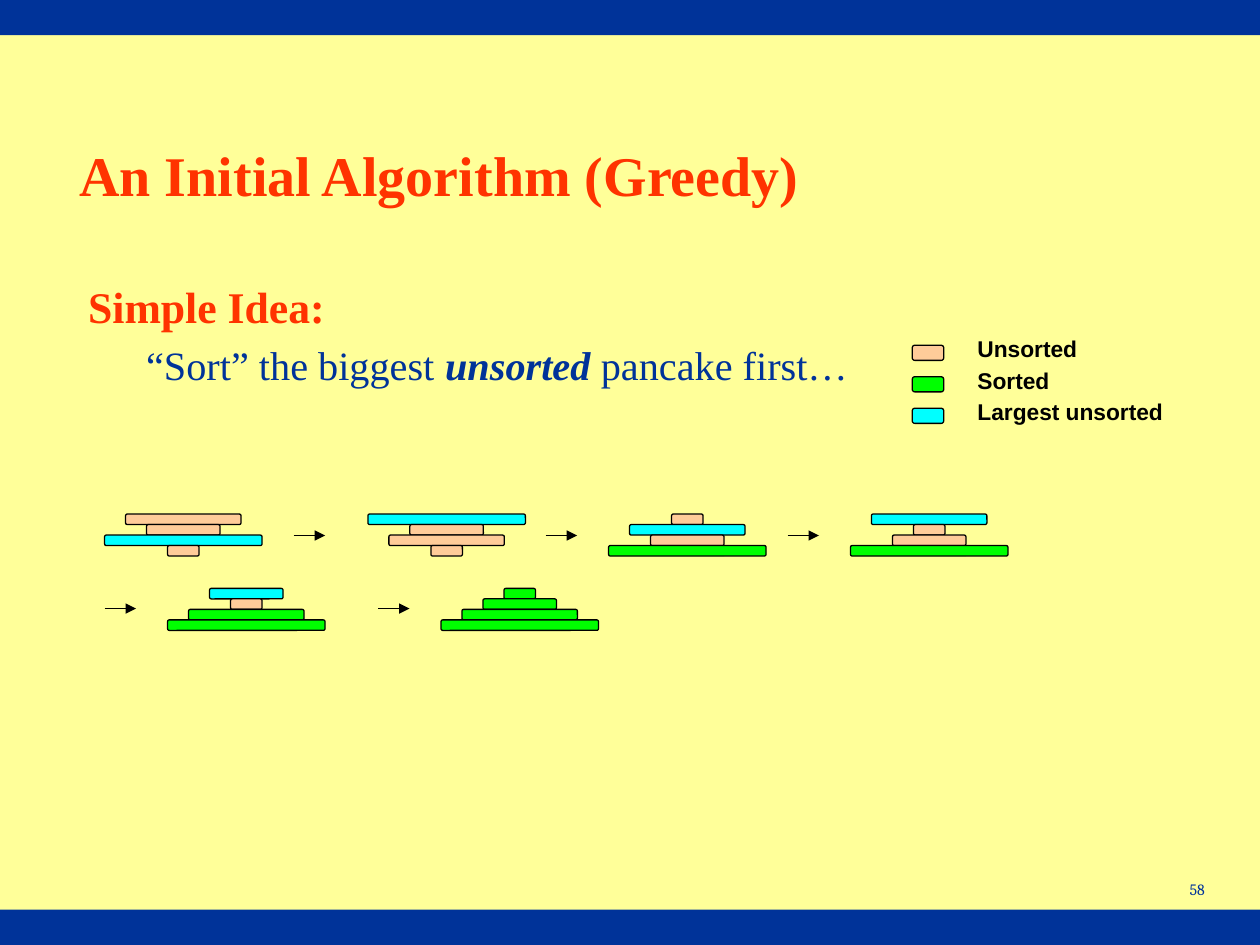
import lxml.etree
import pptx
import pptx.dml.color
import pptx.enum.shapes
import pptx.enum.text
import pptx.oxml.ns
import pptx.util
from pptx.util import Inches

COLORS = {
    "background": "FFFF99", "navy": "003399", "heading": "FF3300", "ink": "000000",
    "unsorted": "FFCC99", "sorted": "00FF00", "largest": "00FFFF",
}
PANCAKE_HEIGHT = 1 / 12
WIDEST = 1.25
STACKS = [
    (0.83, 4.08, (2, 1, 3, 0), 0),
    (2.92, 4.08, (3, 1, 2, 0), 0),
    (4.83, 4.08, (0, 2, 1, 3), 1),
    (6.75, 4.08, (2, 0, 1, 3), 1),
    (1.33, 4.67, (1, 0, 2, 3), 2),
    (3.5, 4.67, (0, 1, 2, 3), 4),
]
ARROWS = [(2.33, 4.25), (4.33, 4.25), (6.25, 4.25), (0.83, 4.83), (3, 4.83)]
LEGEND = [("Unsorted", "unsorted", 1), ("Sorted", "sorted", 1), ("Largest unsorted", "largest", 1.67)]


class SlideBuilder:
    """Holds the slide and its style, with a method for each kind of element."""

    def __init__(self, slide):
        self.slide = slide
        self.serif = "Times New Roman"
        self.outline = pptx.util.Pt(0.75)
        slide.background.fill.solid()
        slide.background.fill.fore_color.rgb = self.rgb("background")

    def rgb(self, color):
        return pptx.dml.color.RGBColor.from_string(COLORS[color])

    def add_xml(self, parent, tag, **attributes):
        lxml.etree.SubElement(parent, pptx.oxml.ns.qn(tag), **attributes)

    def format_run(self, run, font, size, color, bold=False, italic=False):
        run.font.name = font
        run.font.size = pptx.util.Pt(size)
        run.font.bold = bold
        run.font.italic = italic
        run.font.color.rgb = self.rgb(color)

    def place(self, holder, left, top, width, height):
        holder.left, holder.top = Inches(left), Inches(top)
        holder.width, holder.height = Inches(width), Inches(height)
        holder.text_frame.auto_size = pptx.enum.text.MSO_AUTO_SIZE.NONE

    def title(self, text):
        title = self.slide.shapes.title
        self.place(title, 0.53, 0.76, 7.13, 1.25)
        title.text_frame.text = text
        heading = title.text_frame.paragraphs[0]
        heading.alignment = pptx.enum.text.PP_ALIGN.LEFT
        self.format_run(heading.runs[0], self.serif, 32, "heading", bold=True)

    def indent(self, paragraph, margin, first):
        properties = paragraph._p.get_or_add_pPr()
        properties.set("marL", str(Inches(margin)))
        properties.set("indent", str(Inches(first)))
        self.add_xml(properties, "a:buNone")

    def body(self, heading, idea):
        body = self.slide.placeholders[1]
        self.place(body, 0.6, 2.17, 8.5, 1.4)
        body.text_frame.text = heading
        lead = body.text_frame.paragraphs[0]
        self.indent(lead, 0, 0)
        self.format_run(lead.runs[0], self.serif, 25, "heading", bold=True)
        detail = body.text_frame.add_paragraph()
        detail.level = 1
        self.indent(detail, 0.37, 0.01)
        for words, stressed in idea:
            run = detail.add_run()
            run.text = words
            self.format_run(run, self.serif, 23, "navy", stressed, stressed)

    def label(self, parent, text, left, top, width, height, font, size, color, bold=False, align="LEFT"):
        label = parent.shapes.add_textbox(Inches(left), Inches(top), Inches(width), Inches(height))
        label.text_frame.word_wrap = True
        label.text_frame.text = text
        paragraph = label.text_frame.paragraphs[0]
        paragraph.alignment = pptx.enum.text.PP_ALIGN[align]
        self.format_run(paragraph.runs[0], font, size, color, bold)

    def block(self, parent, kind, left, top, width, height, color):
        block = parent.shapes.add_shape(
            pptx.enum.shapes.MSO_SHAPE[kind], Inches(left), Inches(top), Inches(width), Inches(height))
        block.shadow.inherit = False
        block.fill.solid()
        block.fill.fore_color.rgb = self.rgb(color)
        block.line.fill.background()
        return block

    def pancake(self, parent, left, top, width, height, color):
        pancake = self.block(parent, "ROUNDED_RECTANGLE", left, top, width, height, color)
        pancake.line.color.rgb = self.rgb("ink")
        pancake.line.width = self.outline

    def stack(self, left, top, order, sorted_count):
        group = self.slide.shapes.add_group_shape()
        unsorted = order[:len(order) - sorted_count]
        for row, size in enumerate(order):
            color = "sorted" if row >= len(unsorted) else "largest" if size == max(unsorted) else "unsorted"
            width = 0.25 + size / 3
            self.pancake(group, left + (WIDEST - width) / 2, top + row * PANCAKE_HEIGHT,
                         width, PANCAKE_HEIGHT, color)

    def arrow(self, left, top):
        arrow = self.slide.shapes.add_connector(
            pptx.enum.shapes.MSO_CONNECTOR.STRAIGHT,
            Inches(left), Inches(top), Inches(left + 0.25), Inches(top))
        arrow.line.color.rgb = self.rgb("ink")
        arrow.line.width = self.outline
        self.add_xml(arrow.line._get_or_add_ln(), "a:tailEnd", type="triangle")
        self.add_xml(arrow._element.spPr, "a:effectLst")

    def legend(self, entries):
        group = self.slide.shapes.add_group_shape()
        for row, (text, color, width) in enumerate(entries):
            offset = row * 0.25
            self.pancake(group, 7.24, 2.74 + offset, 0.25, 0.12, color)
            self.label(group, text, 7.66, 2.61 + offset, width, 0.31, "Arial", 13, "ink", bold=True)


def main():
    deck = pptx.Presentation()
    deck.slide_width, deck.slide_height = Inches(10), Inches(7.5)
    builder = SlideBuilder(deck.slides.add_slide(deck.slide_layouts[1]))
    for top in (0, 7.22):
        builder.block(builder.slide, "RECTANGLE", 0, top, 10, 0.28, "navy")
    builder.label(builder.slide, "58", 7.58, 6.93, 2.08, 0.5, "Cambria", 9, "navy", align="RIGHT")
    builder.title("An Initial Algorithm (Greedy)")
    builder.body("Simple Idea:", [
        (" “Sort” the biggest ", False), ("unsorted", True), (" pancake first…", False)])
    for stack in STACKS:
        builder.stack(*stack)
    for arrow in ARROWS:
        builder.arrow(*arrow)
    builder.legend(LEGEND)
    deck.save("out.pptx")


if __name__ == "__main__":
    main()
